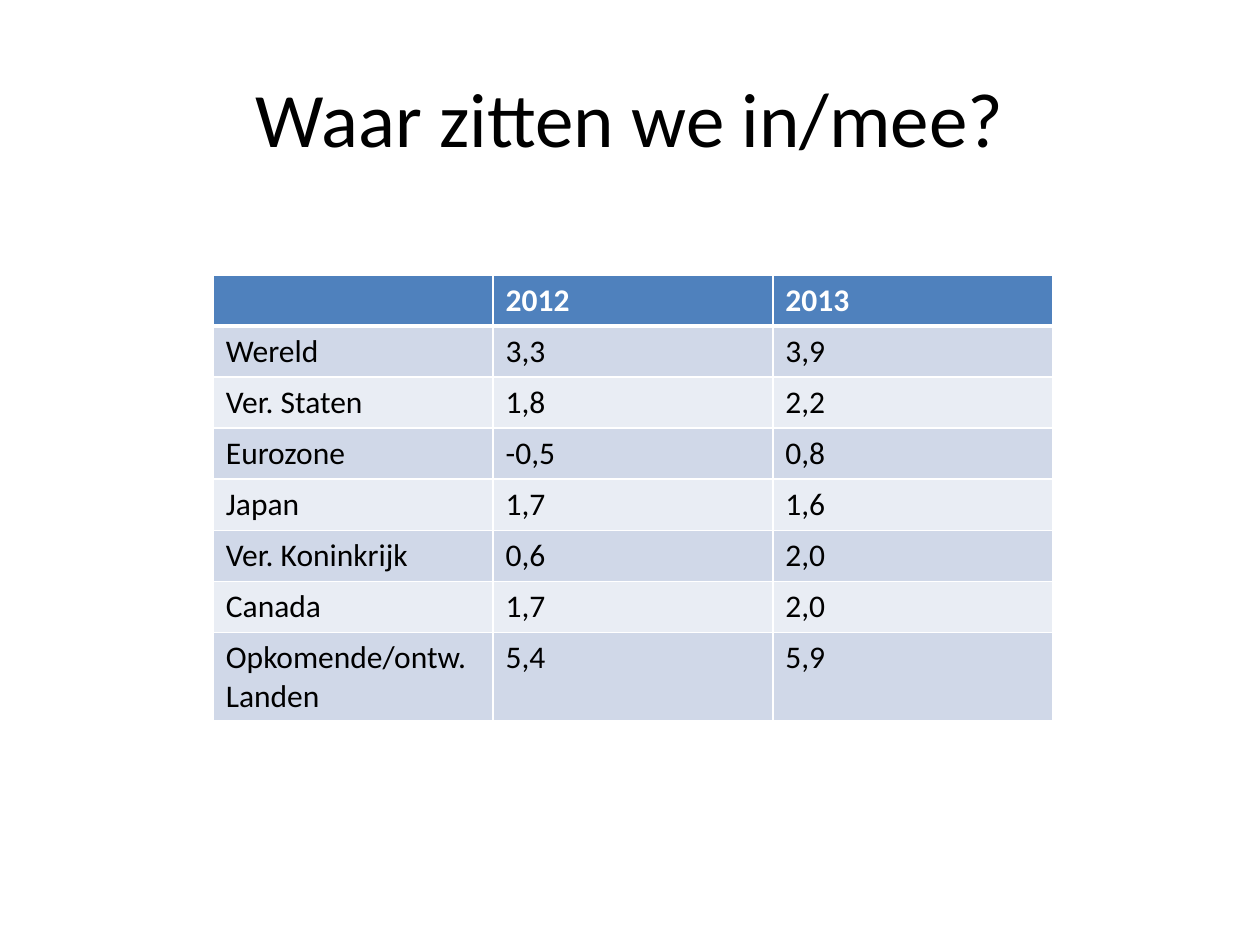
from lxml import etree
from pptx import Presentation
from pptx.dml.color import RGBColor
from pptx.enum.text import MSO_ANCHOR, PP_ALIGN
from pptx.oxml.ns import qn
from pptx.util import Cm, Pt

MIDDLE = MSO_ANCHOR.MIDDLE
CENTER = PP_ALIGN.CENTER
FONT = "Calibri"
WHITE, BLACK, BLUE = "FFFFFF", "000000", "4F81BD"
BANDS = ["E9EDF4", "D0D8E8"]
ROWS = [
    ["", "2012", "2013"],
    ["Wereld", "3,3", "3,9"],
    ["Ver. Staten", "1,8", "2,2"],
    ["Eurozone", "-0,5", "0,8"],
    ["Japan", "1,7", "1,6"],
    ["Ver. Koninkrijk", "0,6", "2,0"],
    ["Canada", "1,7", "2,0"],
    ["Opkomende/ontw. Landen", "5,4", "5,9"],
]


def paint(color, tone):
    color.rgb = RGBColor.from_string(tone)


def write(para, text, size, tone, bold=False):
    run = para.add_run()
    run.text = text
    run.font.name = FONT
    run.font.size = Pt(size)
    run.font.bold = bold
    fill = run.font.fill
    fill.solid()
    paint(fill.fore_color, tone)


deck = Presentation()
deck.slide_width = Cm(25.4)
deck.slide_height = Cm(19.05)
slide = deck.slides.add_slide(deck.slide_layouts[6])

title = slide.shapes.add_textbox(Cm(1.27), Cm(0.76), Cm(22.86), Cm(3.18))
frame = title.text_frame
frame.word_wrap = True
frame.vertical_anchor = MIDDLE
para = frame.paragraphs[0]
para.alignment = CENTER
write(para, "Waar zitten we in/mee?", 44, BLACK)

table = slide.shapes.add_table(
    len(ROWS), len(ROWS[0]), Cm(4.3), Cm(5.54), Cm(16.93), Cm(8.24)
).table
for col in table.columns:
    col.width = Cm(5.64)
for row in table.rows:
    row.height = Cm(1.03)

for r, row in enumerate(ROWS):
    head = r == 0
    for c, text in enumerate(row):
        cell = table.cell(r, c)
        props = cell._tc.get_or_add_tcPr()
        for side in ["L", "R", "T", "B"]:
            thick = (r, side) in [(0, "B"), (1, "T")]
            line = etree.SubElement(props, qn(f"a:ln{side}"), w=str(Pt(3 if thick else 1)))
            solid = etree.SubElement(line, qn("a:solidFill"))
            etree.SubElement(solid, qn("a:srgbClr"), val=WHITE)
        cell.fill.solid()
        paint(cell.fill.fore_color, BLUE if head else BANDS[r % 2])
        if text:
            write(cell.text_frame.paragraphs[0], text, 18, WHITE if head else BLACK, head)

deck.save("out.pptx")
